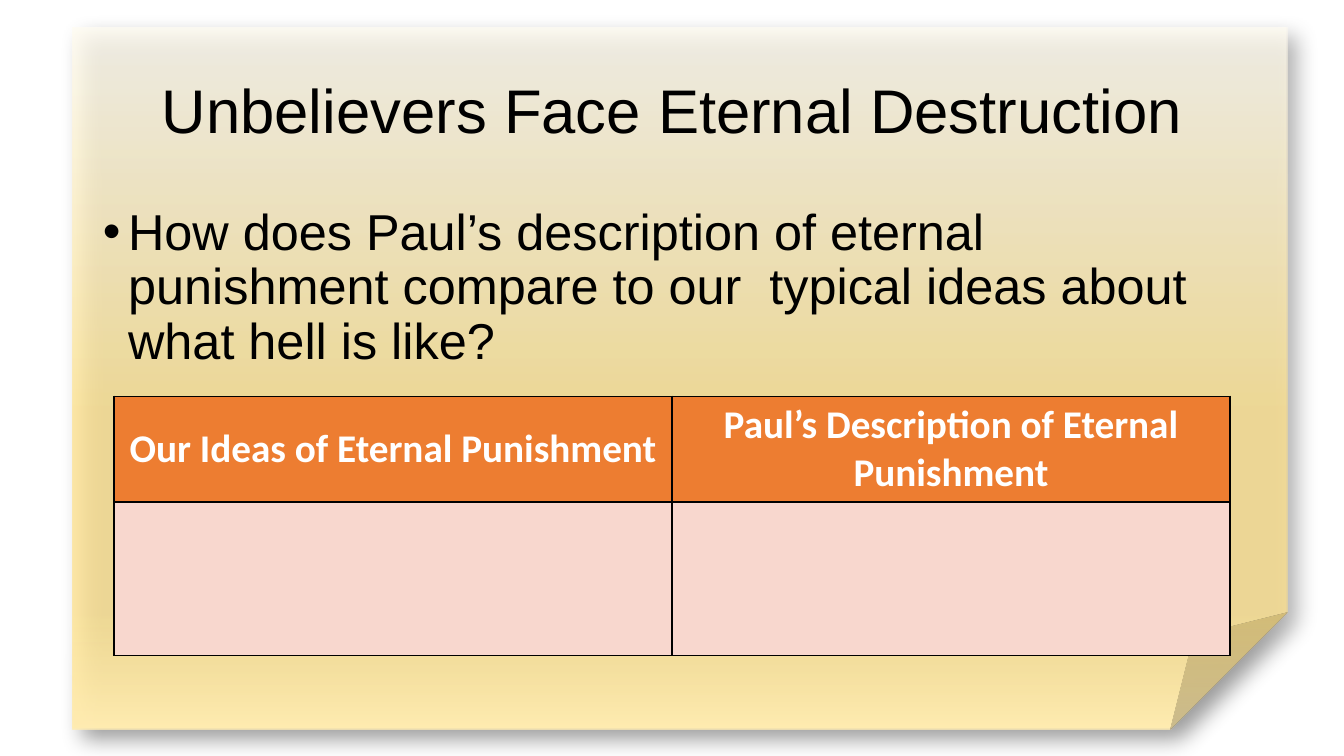
from lxml.etree import SubElement
from pptx import Presentation
from pptx.dml.color import RGBColor
from pptx.enum.shapes import MSO_SHAPE
from pptx.enum.text import MSO_ANCHOR, MSO_AUTO_SIZE, PP_ALIGN
from pptx.oxml import parse_xml
from pptx.oxml.ns import nsdecls, qn
from pptx.util import Inches, Pt

BLACK = RGBColor(0x00, 0x00, 0x00)
WHITE = RGBColor(0xFF, 0xFF, 0xFF)
ORANGE = RGBColor(0xED, 0x7D, 0x31)
PINK = RGBColor(0xF8, 0xD7, 0xCE)
CREAM = RGBColor(0xFF, 0xFC, 0xF2)
GOLD = RGBColor(0xFF, 0xE3, 0x8C)
PALE_GOLD = RGBColor(0xFF, 0xEC, 0xB2)
# Gradient stops: position %, colour, opacity %
PAPER = [(0, CREAM, 77), (55, GOLD, 76), (83, GOLD, 76), (100, PALE_GOLD, 100)]


def place(sp, left, top, width, height):
    sp.left, sp.top = Inches(left), Inches(top)
    sp.width, sp.height = Inches(width), Inches(height)


def write(tf, text, align, **font):
    p = tf.paragraphs[0]
    p.alignment = align
    r = p.add_run()
    r.text = text
    r.font.color.rgb = font.pop("color")
    for name, value in font.items():
        setattr(r.font, name, value)
    return p


prs = Presentation()
prs.slide_width, prs.slide_height = Inches(13.33), Inches(7.5)
s = prs.slides.add_slide(prs.slide_layouts[1])

# Paper sheet with a folded corner, behind everything
sheet = s.shapes.add_shape(MSO_SHAPE.FOLDED_CORNER, 0, 0, 0, 0)
place(sheet, 0.72, 0.27, 12.05, 6.97)
sheet.line.fill.background()
stops = "".join(
    f'<a:gs pos="{pos * 1000}"><a:srgbClr val="{color}">'
    f'<a:alpha val="{alpha * 1000}"/></a:srgbClr></a:gs>'
    for pos, color, alpha in PAPER)
sheet_pr = sheet._element.spPr
sheet_pr.insert(2, parse_xml(
    f'<a:gradFill {nsdecls("a")} rotWithShape="1"><a:gsLst>{stops}</a:gsLst>'
    '<a:lin ang="5400000" scaled="0"/></a:gradFill>'))
sheet_pr.append(parse_xml(
    f'<a:effectLst {nsdecls("a")}><a:outerShdw blurRad="{Pt(16)}" '
    f'dist="{Pt(10)}" dir="2700000" algn="tl" rotWithShape="0">'
    f'<a:srgbClr val="{BLACK}"><a:alpha val="40000"/></a:srgbClr>'
    '</a:outerShdw></a:effectLst>'))
s.shapes._spTree.insert(2, sheet._element)

# Title and question
title, body = s.placeholders
place(title, 0.92, 0.4, 11.5, 1.45)
place(body, 0.92, 2, 11.5, 4.76)
for sp in (title, body):
    sp.text_frame.word_wrap = True
    sp.text_frame.auto_size = MSO_AUTO_SIZE.NONE
title.text_frame.vertical_anchor = MSO_ANCHOR.MIDDLE
p = write(title.text_frame, "Unbelievers Face Eternal Destruction",
          PP_ALIGN.CENTER, size=Pt(44), name="Arial", color=BLACK)
p.line_spacing = 0.9
p = write(body.text_frame,
          "How does Paul’s description of eternal punishment compare to our  "
          "typical ideas about what hell is like?",
          PP_ALIGN.LEFT, size=Pt(36), name="Arial", color=BLACK)
p.line_spacing, p.space_before = 0.9, Pt(0)
pPr = p._p.get_or_add_pPr()
pPr.set("marL", str(Inches(0.25)))
pPr.set("indent", str(-Inches(0.25)))
SubElement(pPr, qn("a:buFont")).set("typeface", "Arial")
SubElement(pPr, qn("a:buChar")).set("char", "•")

# Comparison table: header row over an empty row to fill in
headers = ["Our Ideas of Eternal Punishment",
           "Paul’s Description of Eternal Punishment"]
frame = s.shapes.add_table(2, 2, Inches(1.13), Inches(3.93),
                           Inches(11.07), Inches(2.57))
table = frame.table
for row, height in zip(table.rows, (1.05, 1.52)):
    row.height = Inches(height)
for c, header in enumerate(headers):
    write(table.cell(0, c).text_frame, header, PP_ALIGN.CENTER,
          size=Pt(28), name="Calibri", bold=True, color=WHITE)
    for r, color in enumerate((ORANGE, PINK)):
        cell = table.cell(r, c)
        cell.vertical_anchor = MSO_ANCHOR.MIDDLE
        tcPr = cell._tc.get_or_add_tcPr()
        for side in ("lnL", "lnR", "lnT", "lnB"):
            tcPr.append(parse_xml(
                f'<a:{side} {nsdecls("a")} w="{Pt(1)}"><a:solidFill>'
                f'<a:srgbClr val="{BLACK}"/></a:solidFill></a:{side}>'))
        cell.fill.solid()
        cell.fill.fore_color.rgb = color

prs.save("out.pptx")
